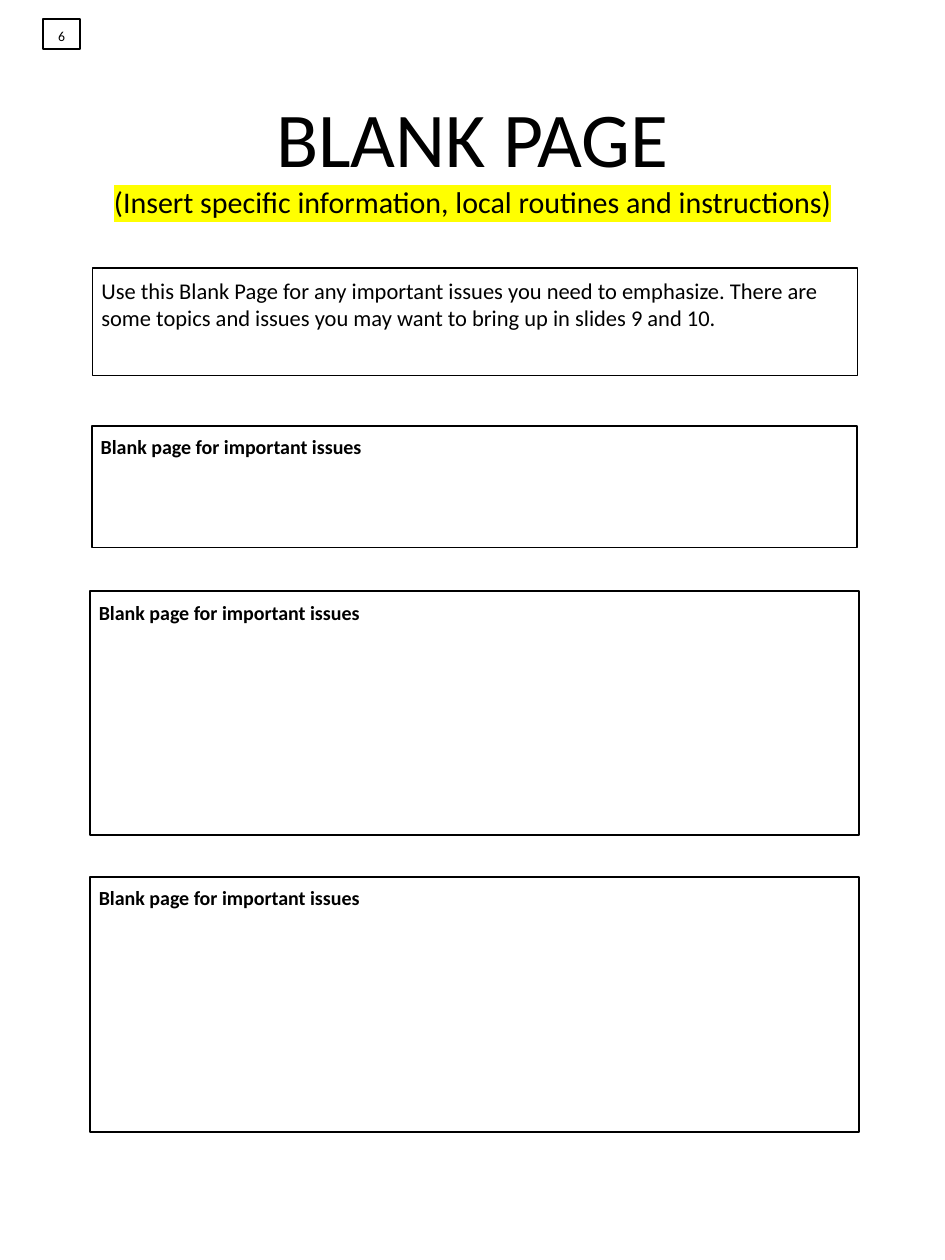
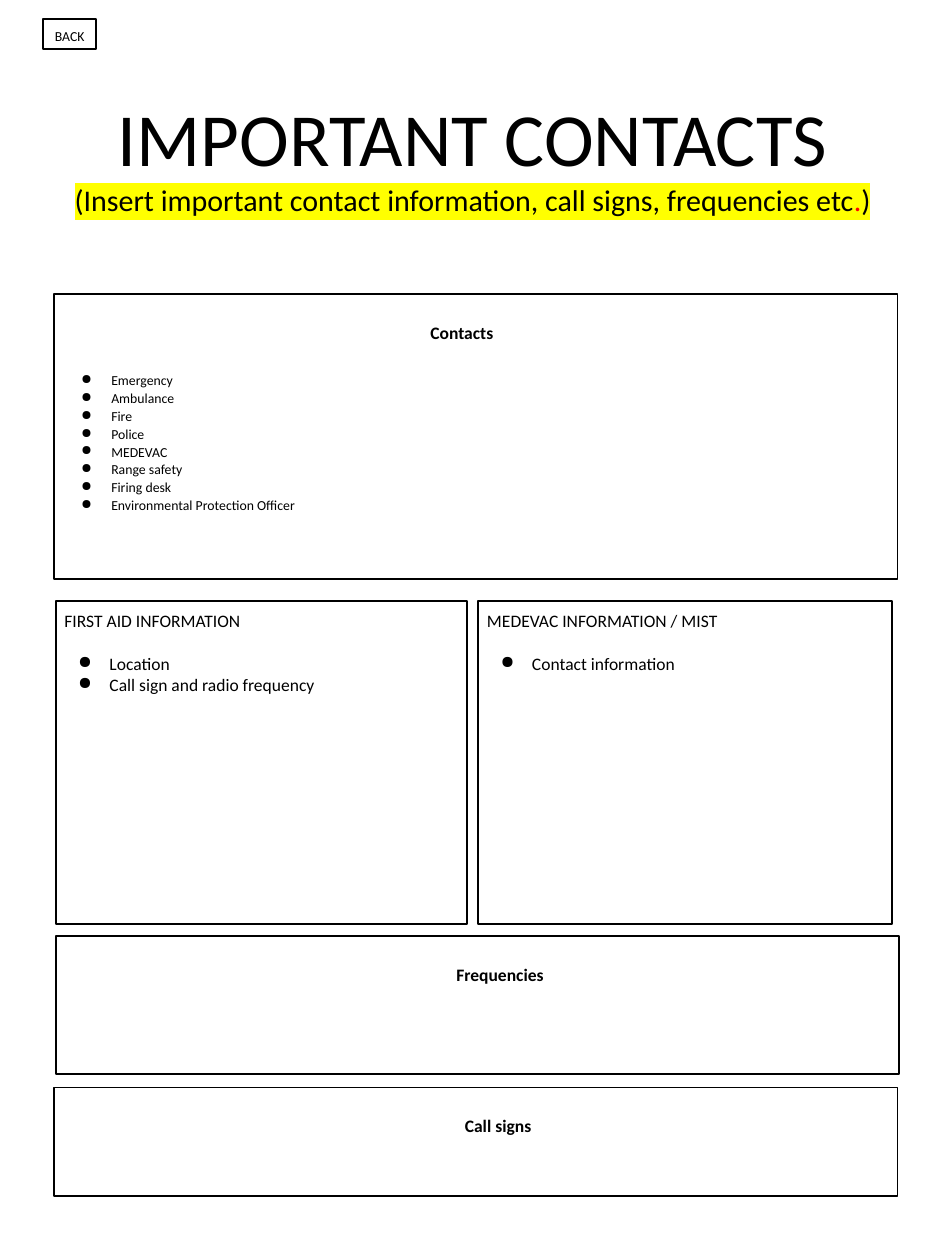
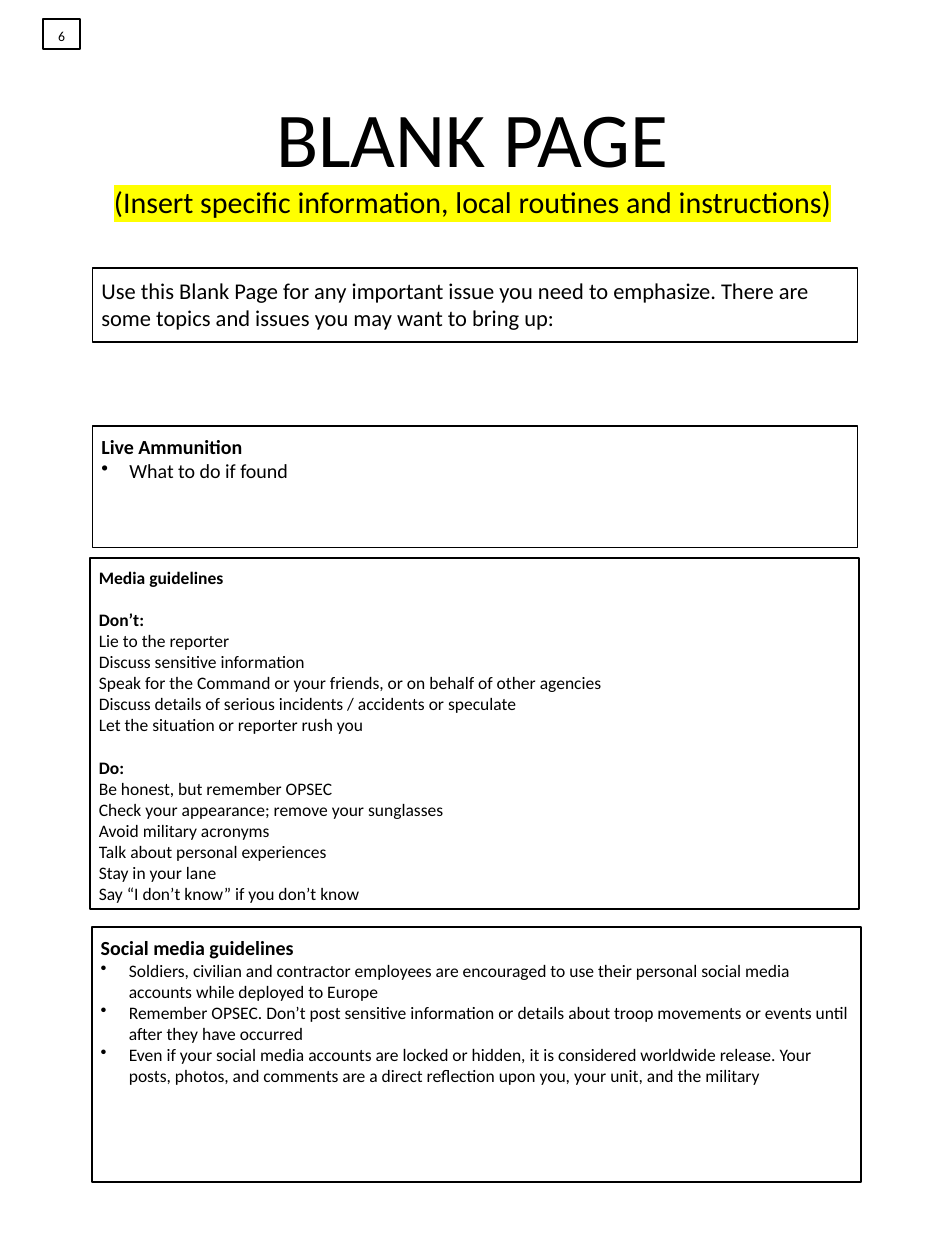
from dataclasses import dataclass

from lxml import etree
from pptx import Presentation
from pptx.dml.color import RGBColor
from pptx.enum import shapes, text
from pptx.oxml import ns
from pptx.util import Pt


@dataclass(frozen=True)
class Theme:
    font: str = "Calibri"
    ink: RGBColor = RGBColor(0, 0, 0)
    accent: RGBColor = RGBColor(255, 0, 0)
    highlight: str = "FFFF00"
    outline: float = 1.5
    subtitle: int = 24
    intro: int = 18
    heading: int = 16
    body: int = 14
    small: int = 11


THEME = Theme()
BOX_INSETS = (7.2, 7.2, 7.2, 7.2)
TITLE_INSETS = (10, 5, 10, 5)
BANNER_INSETS = (10, 20.5, 10, 5)  # leaves one small line above the heading
TITLE_FRAME = (38, 40, 680, 168)
LEFT, CENTER = text.PP_ALIGN.LEFT, text.PP_ALIGN.CENTER


@dataclass(frozen=True)
class Line:
    """One paragraph: its text, type, bullet and spacing in points."""
    words: str
    size: int = THEME.body
    bold: bool = False
    bullet: str = ""
    indent: float = 0
    hanging: float = 0
    before: float = 0
    spacing: float = 1.0
    align: text.PP_ALIGN = LEFT


def set_font(font, size, color=THEME.ink, bold=False):
    font.name = THEME.font
    font.size = Pt(size)
    font.bold = bold
    font.color.rgb = color


def set_frame(frame, insets, anchor):
    frame.word_wrap = True
    frame.auto_size = text.MSO_AUTO_SIZE.NONE
    frame.vertical_anchor = anchor
    (frame.margin_left, frame.margin_top,
     frame.margin_right, frame.margin_bottom) = map(Pt, insets)


def highlight_run(run):
    mark = etree.Element(ns.qn("a:highlight"))
    etree.SubElement(mark, ns.qn("a:srgbClr"), val=THEME.highlight)
    run.font.fill._xPr.find(ns.qn("a:solidFill")).addnext(mark)


def set_indent(paragraph, line):
    properties = paragraph._p.get_or_add_pPr()
    properties.set("marL", str(Pt(line.indent)))
    properties.set("indent", str(Pt(-line.hanging)))
    if line.bullet:
        etree.SubElement(properties, ns.qn("a:buChar"), char=line.bullet)


def write_line(paragraph, line):
    set_indent(paragraph, line)
    paragraph.text = line.words
    paragraph.alignment = line.align
    paragraph.line_spacing = line.spacing
    paragraph.space_before = Pt(line.before)
    set_font(paragraph.font, line.size, bold=line.bold)


def add_box(slide, frame, lines, insets=BOX_INSETS):
    box = slide.shapes.add_shape(shapes.MSO_SHAPE.RECTANGLE, *map(Pt, frame))
    box.shadow.inherit = False
    box.fill.background()
    box.line.color.rgb = THEME.ink
    box.line.width = Pt(THEME.outline)
    set_frame(box.text_frame, insets, text.MSO_ANCHOR.TOP)
    for index, line in enumerate(lines):
        paragraphs = box.text_frame
        paragraph = paragraphs.add_paragraph() if index else paragraphs.paragraphs[0]
        write_line(paragraph, line)


def add_title(slide, title, size, subtitle_parts):
    """Write the title and, below it, highlighted (words, colour) parts."""
    shape = slide.shapes.title
    shape.left, shape.top, shape.width, shape.height = map(Pt, TITLE_FRAME)
    set_frame(shape.text_frame, TITLE_INSETS, text.MSO_ANCHOR.MIDDLE)
    paragraph = shape.text_frame.paragraphs[0]
    paragraph.alignment = CENTER
    run = paragraph.add_run()
    run.text = title
    set_font(run.font, size)
    paragraph.add_line_break()
    for words, color in subtitle_parts:
        run = paragraph.add_run()
        run.text = words
        set_font(run.font, THEME.subtitle, color)
        highlight_run(run)


def add_slide(presentation, title, size, subtitle_parts, tag, tag_width):
    slide = presentation.slides.add_slide(presentation.slide_layouts[5])
    add_title(slide, title, size, subtitle_parts)
    add_box(slide, (34.5, 15, tag_width, 24.5),
            [Line(tag, THEME.small, align=CENTER)])
    return slide


def add_blank_page(presentation, intro, intro_height):
    subtitle = "(Insert specific information, local routines and instructions)"
    slide = add_slide(presentation, "BLANK PAGE", 62,
                      [(subtitle, THEME.ink)], "6", 29.5)
    add_box(slide, (74, 214.5, 612, intro_height), [Line(intro, THEME.intro)])
    return slide


def heading(words, size=THEME.heading, before=0):
    return Line(words, size, bold=True, before=before)


def dots(items, size=THEME.body):
    return [Line(item, size, bullet="•", indent=22.5, hanging=22.5)
            for item in items]


def banner(words, indent=0):
    return Line(words, bold=True, indent=indent, spacing=1.08, align=CENTER)


def add_info_box(slide, frame, title, items):
    bullets = [Line(item, bullet="●", indent=36, hanging=25,
                    before=0 if index else 17)
               for index, item in enumerate(items)]
    add_box(slide, frame, [Line(title), *bullets])


def build_issues(presentation):
    slide = add_blank_page(
        presentation,
        "Use this Blank Page for any important issues you need to emphasize. "
        "There are some topics and issues you may want to bring up in "
        "slides 9 and 10.", 86)
    for frame in ((73.5, 340.5, 612, 97.5),
                  (72, 473, 615, 195),
                  (72, 701.5, 615, 204)):
        add_box(slide, frame, [heading("Blank page for important issues")])


def build_contacts(presentation):
    slide = add_slide(
        presentation, "IMPORTANT CONTACTS", 60,
        [("(Insert important contact information, call signs, "
          "frequencies etc", THEME.ink), (".", THEME.accent), (")", THEME.ink)],
        "BACK", 42.5)
    contacts = ("Emergency", "Ambulance", "Fire", "Police", "MEDEVAC",
                "Range safety", "Firing desk",
                "Environmental Protection Officer")
    bullets = [Line(contact, THEME.small, bullet="●", indent=36, hanging=24,
                    before=0 if index else 22.5, spacing=1.08)
               for index, contact in enumerate(contacts)]
    add_box(slide, (43, 235.5, 675, 227.5), [banner("Contacts"), *bullets],
            (10, 20.5, 32, 5))
    add_info_box(slide, (44.5, 481, 329.5, 258.5), "FIRST AID INFORMATION",
                 ("Location", "Call sign and radio frequency"))
    add_info_box(slide, (382.5, 481, 331, 258.5), "MEDEVAC INFORMATION / MIST",
                 ("Contact information",))
    add_box(slide, (44.5, 749, 675, 110), [banner("Frequencies", 36)],
            BANNER_INSETS)
    add_box(slide, (43, 870, 675, 87), [banner("Call signs", 36)],
            BANNER_INSETS)


def build_guidelines(presentation):
    slide = add_blank_page(
        presentation,
        "Use this Blank Page for any important issue you need to emphasize. "
        "There are some topics and issues you may want to bring up:", 59)
    add_box(slide, (74, 340.5, 612, 97.5),
            [heading("Live Ammunition"),
             *dots(["What to do if found"], THEME.heading)])
    media_rules = {
        "Don’t:": (
            "Lie to the reporter",
            "Discuss sensitive information",
            "Speak for the Command or your friends, or on behalf of other agencies",
            "Discuss details of serious incidents / accidents or speculate",
            "Let the situation or reporter rush you"),
        "Do:": (
            "Be honest, but remember OPSEC",
            "Check your appearance; remove your sunglasses",
            "Avoid military acronyms",
            "Talk about personal experiences",
            "Stay in your lane",
            "Say “I don’t know” if you don’t know"),
    }
    media_lines = [heading("Media guidelines", THEME.body)]
    for label, rules in media_rules.items():
        media_lines.append(heading(label, THEME.body, before=17))
        media_lines.extend(map(Line, rules))
    add_box(slide, (72, 446.5, 615, 281), media_lines)
    add_box(slide, (73.5, 741.5, 615, 204.5), [
        heading("Social media guidelines"),
        *dots([
            "Soldiers, civilian and contractor employees are encouraged to use "
            "their personal social media accounts while deployed to Europe",
            "Remember OPSEC. Don’t post sensitive information or details about "
            "troop movements or events until after they have occurred",
            "Even if your social media accounts are locked or hidden, it is "
            "considered worldwide release. Your posts, photos, and comments are "
            "a direct reflection upon you, your unit, and the military"])])


def main():
    presentation = Presentation()
    presentation.slide_width = Pt(756)
    presentation.slide_height = Pt(1008)
    build_issues(presentation)
    build_contacts(presentation)
    build_guidelines(presentation)
    presentation.save("out.pptx")


if __name__ == "__main__":
    main()
